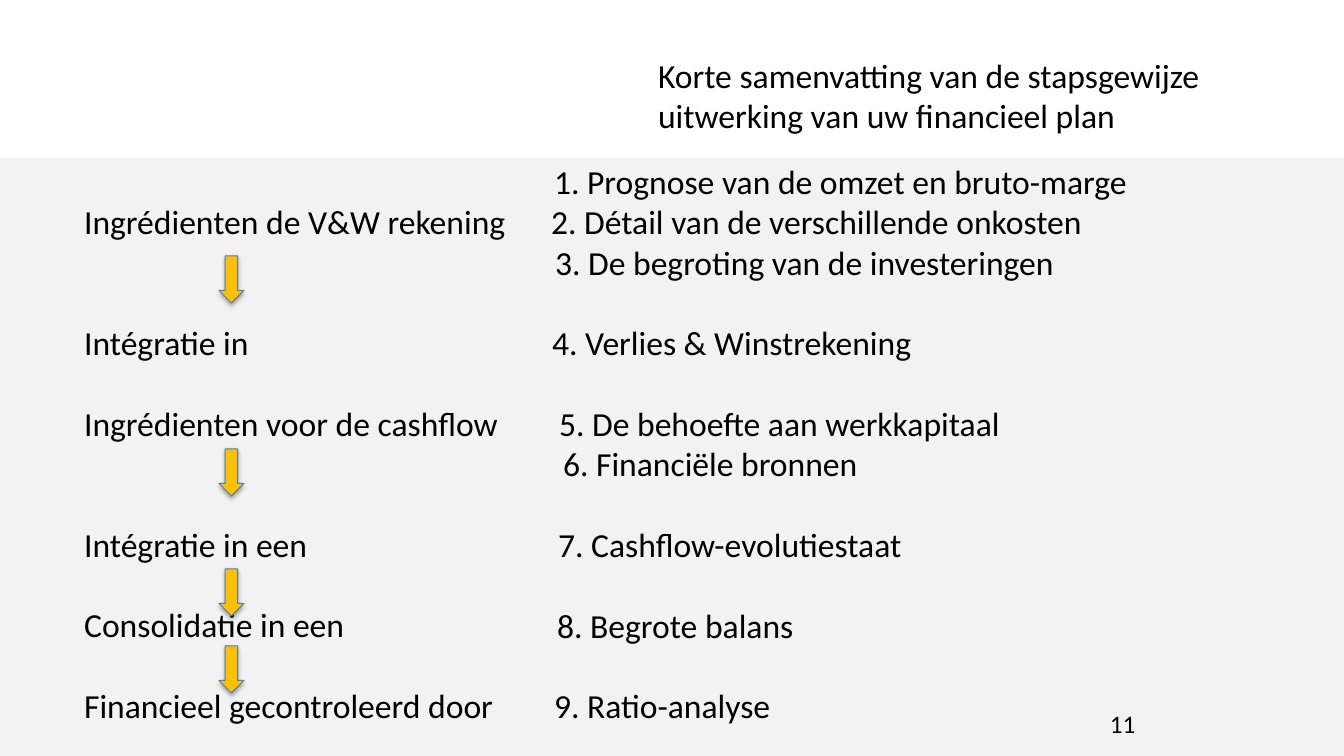
from dataclasses import dataclass

from lxml import etree
from pptx import Presentation, util as u
from pptx.dml.color import RGBColor
from pptx.enum import shapes, text
from pptx.oxml import parse_xml
from pptx.oxml.ns import nsdecls, qn

PX = 914400 / 100.8
ROW = 40
ARROW_TOPS = (256, 449, 569, 646)
TITLE = "Korte samenvatting van de stapsgewijze uitwerking van uw financieel plan"
# Each line is (text, blank rows above, indent in px).
STAGES = [
    ("Ingrédienten de V&W rekening", 0, 0),
    ("Intégratie in", 2, 0),
    ("Ingrédienten voor de cashflow", 1, 0),
    ("Intégratie in een", 2, 0),
    ("Consolidatie in een", 1, 0),
    ("Financieel gecontroleerd door", 1, 0),
]
STEPS = [
    ("1. Prognose van de omzet en bruto-marge", 0, 3),
    ("2. Détail van de verschillende onkosten", 0, 0),
    ("3. De begroting van de investeringen", 0, 4),
    ("4. Verlies & Winstrekening", 1, 1),
    ("5. De behoefte aan werkkapitaal", 1, 8),
    ("6. Financiële bronnen", 0, 12),
    ("7. Cashflow-evolutiestaat", 1, 7),
    ("8. Begrote balans", 1, 6),
    ("9. Ratio-analyse", 1, 3),
]


@dataclass(frozen=True)
class Theme:
    """Colours, font and type sizes of the slide."""
    ink: RGBColor = RGBColor.from_string("000000")
    band: RGBColor = RGBColor.from_string("F2F2F2")
    arrow: RGBColor = RGBColor.from_string("FFC000")
    arrow_line: RGBColor = RGBColor.from_string("4B7EBC")
    font: str = "Calibri"
    body: float = 24
    number: float = 18
    line: float = 28.8


THEME = Theme()


def px(length):
    """Turn px into EMU."""
    return u.Emu(round(length * PX))


def place(shape, left, top, width, height):
    """Move and size a shape in px."""
    shape.left, shape.top = px(left), px(top)
    shape.width, shape.height = px(width), px(height)


def prepare_frame(shape):
    """Make a wrapping, top-anchored text frame with fixed size."""
    frame = shape.text_frame
    frame.word_wrap = True
    frame.auto_size = text.MSO_AUTO_SIZE.NONE
    frame.vertical_anchor = text.MSO_ANCHOR.TOP
    return frame


def style_paragraph(paragraph, size):
    """Apply the theme font and left alignment."""
    paragraph.alignment = text.PP_ALIGN.LEFT
    paragraph.font.name = THEME.font
    paragraph.font.size = u.Pt(size)
    paragraph.font.color.rgb = THEME.ink


def add_band(slide):
    """Add the grey band behind all other elements."""
    band = slide.shapes.add_shape(shapes.MSO_SHAPE.RECTANGLE, 0, px(158), px(1344), px(598))
    band.shadow.inherit = False
    band.fill.solid()
    band.fill.fore_color.rgb = THEME.band
    band.line.fill.background()
    slide.shapes._spTree.insert(2, band._element)


def fill_title(shape):
    """Write the title."""
    place(shape, 648, 50, 655, 92)
    paragraph = prepare_frame(shape).paragraphs[0]
    paragraph.text = TITLE
    paragraph.line_spacing = u.Pt(THEME.line)
    style_paragraph(paragraph, THEME.body)


def set_plain_indent(paragraph, indent):
    """Remove the bullet and set the left margin in px."""
    properties = paragraph._p.get_or_add_pPr()
    properties.set("marL", str(int(px(indent))))
    properties.set("indent", "0")
    etree.SubElement(properties, qn("a:buNone"))


def fill_column(shape, lines, left, top, width):
    """Write one column of lines that runs down to the slide's bottom edge."""
    place(shape, left, top, width, 756 - top)
    frame = prepare_frame(shape)
    for index, (line, blank_rows, indent) in enumerate(lines):
        paragraph = frame.add_paragraph() if index else frame.paragraphs[0]
        paragraph.text = line
        set_plain_indent(paragraph, indent)
        paragraph.line_spacing = u.Pt(THEME.line)
        paragraph.space_before = u.Pt(THEME.line * blank_rows)
        style_paragraph(paragraph, THEME.body)


def add_arrow(slide, top):
    """Add a down arrow with a soft shadow."""
    arrow = slide.shapes.add_shape(
        shapes.MSO_SHAPE.DOWN_ARROW, px(219), px(top), px(25), px(47))
    arrow.fill.solid()
    arrow.fill.fore_color.rgb = THEME.arrow
    arrow.line.color.rgb = THEME.arrow_line
    arrow.line.width = u.Pt(0.75)
    arrow.shadow.inherit = False
    effects = arrow._element.spPr.find(qn("a:effectLst"))
    effects.append(parse_xml(
        f'<a:outerShdw {nsdecls("a")} blurRad="40000" dist="23000" dir="5400000" '
        'rotWithShape="0"><a:srgbClr val="000000"><a:alpha val="35000"/>'
        '</a:srgbClr></a:outerShdw>'))


def add_page_number(slide, number):
    """Add the page number at the bottom right."""
    box = slide.shapes.add_textbox(px(1100), px(703), px(170), px(40))
    paragraph = prepare_frame(box).paragraphs[0]
    paragraph.text = number
    style_paragraph(paragraph, THEME.number)


def main():
    """Build and save the slide."""
    presentation = Presentation()
    presentation.slide_width, presentation.slide_height = px(1344), px(756)
    slide = presentation.slides.add_slide(presentation.slide_layouts[3])
    add_band(slide)
    fill_title(slide.shapes.title)
    fill_column(slide.placeholders[1], STAGES, 74, 156 + ROW, 460)
    fill_column(slide.placeholders[2], STEPS, 541, 156, 680)
    for top in ARROW_TOPS:
        add_arrow(slide, top)
    add_page_number(slide, "11")
    presentation.save("out.pptx")


if __name__ == "__main__":
    main()
